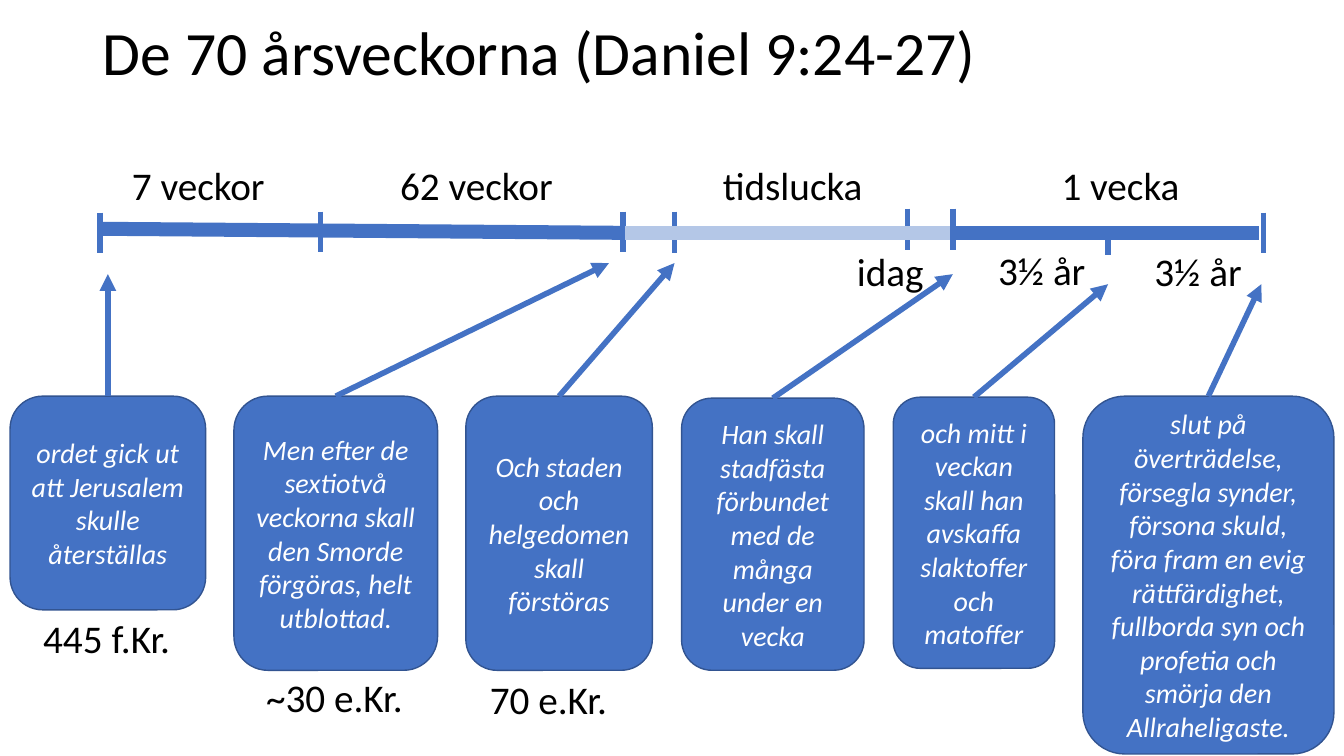
"""Timeline slide of the seventy weeks in Daniel 9."""
import pptx
import pptx.util
import pptx.dml.color
import pptx.enum.shapes
import pptx.enum.text
import pptx.oxml
import pptx.oxml.ns

Inches = pptx.util.Inches
Pt = pptx.util.Pt
ALIGN = pptx.enum.text.PP_ALIGN
ANCHOR = pptx.enum.text.MSO_ANCHOR
BLUE, EDGE, PALE = "4472C4", "325491", "B4C7E7"


def rgb(value):
    return pptx.dml.color.RGBColor.from_string(value)


def write(tf, text, size=28, color="000000", italic=False, align=ALIGN.LEFT, spacing=None):
    p = tf.paragraphs[0]
    p.alignment = align
    if spacing:
        p.line_spacing = spacing
    r = p.add_run()
    r.text = text
    r.font.name = "Calibri"
    r.font.size = Pt(size)
    r.font.italic = italic
    r.font.color.rgb = rgb(color)


class Timeline:
    def __init__(self, prs):
        self.slide = prs.slides.add_slide(prs.slide_layouts[5])
        self.shapes = self.slide.shapes

    def title(self, text, x, y, w, h):
        sp = self.shapes.title
        sp.left, sp.top, sp.width, sp.height = map(Inches, (x, y, w, h))
        tf = sp.text_frame
        tf.word_wrap = True
        tf.vertical_anchor = ANCHOR.MIDDLE
        write(tf, text, size=44, spacing=0.9)

    def line(self, x1, y1, x2, y2, color=BLUE, width=4, arrow=False):
        kind = pptx.enum.shapes.MSO_CONNECTOR.STRAIGHT
        sp = self.shapes.add_connector(kind, *map(Inches, (x1, y1, x2, y2)))
        sp.line.color.rgb = rgb(color)
        sp.line.width = Pt(width)
        if arrow:
            tail = pptx.oxml.ns.qn("a:tailEnd")
            sp.line._get_or_add_ln().append(
                pptx.oxml.xmlchemy.OxmlElement("a:tailEnd"))
            sp.line._get_or_add_ln().find(tail).set("type", "triangle")
        sp._element.spPr.append(pptx.oxml.xmlchemy.OxmlElement("a:effectLst"))

    def label(self, text, x, y, w):
        sp = self.shapes.add_textbox(*map(Inches, (x, y, w, 0.57)))
        tf = sp.text_frame
        tf.word_wrap = False
        tf.auto_size = pptx.enum.text.MSO_AUTO_SIZE.SHAPE_TO_FIT_TEXT
        write(tf, text)

    def event(self, text, x, y, w, h, tip):
        kind = pptx.enum.shapes.MSO_SHAPE.ROUNDED_RECTANGLE
        sp = self.shapes.add_shape(kind, *map(Inches, (x, y, w, h)))
        sp.shadow.inherit = False
        sp.fill.solid()
        sp.fill.fore_color.rgb = rgb(BLUE)
        sp.line.color.rgb = rgb(EDGE)
        sp.line.width = Pt(1)
        tf = sp.text_frame
        tf.word_wrap = True
        tf.vertical_anchor = ANCHOR.MIDDLE
        write(tf, text, size=20, color="FFFFFF", italic=True, align=ALIGN.CENTER)
        self.line(x + w / 2, y, *tip, arrow=True)


LABELS = [
    ("7 veckor", 1.21, 1.55, 1.53),
    ("62 veckor", 3.87, 1.55, 1.73),
    ("tidslucka", 7.07, 1.55, 1.61),
    ("1 vecka", 10.43, 1.55, 1.39),
    ("idag", 8.4, 2.4, 0.87),
    ("3½ år", 9.8, 2.39, 1.08),
    ("3½ år", 11.35, 2.4, 1.08),
    ("445 f.Kr.", 0.33, 6.05, 1.48),
    ("~30 e.Kr.", 2.54, 6.63, 1.58),
    ("70 e.Kr.", 4.76, 6.65, 1.38),
]
TICKS = [
    (0.99, 2.11, 2.51), (3.18, 2.1, 2.5), (6.18, 2.1, 2.5), (6.69, 2.1, 2.51),
    (9, 2.07, 2.48), (9.45, 2.07, 2.48), (10.99, 2.25, 2.53), (12.53, 2.11, 2.51),
]
EVENTS = [
    ("ordet gick ut att Jerusalem skulle återställas",
     0.1, 3.93, 1.94, 2.12, (1.07, 2.72)),
    ("Men efter de sextiotvå veckorna skall den Smorde förgöras, helt utblottad.",
     2.32, 3.93, 2.02, 2.72, (6.04, 2.61)),
    ("Och staden och helgedomen skall förstöras",
     4.62, 3.93, 1.85, 2.72, (6.69, 2.61)),
    ("Han skall stadfästa förbundet med de många under en vecka",
     6.76, 3.95, 1.81, 2.7, (9.45, 2.72)),
    ("och mitt i veckan skall han avskaffa slaktoffer och matoffer",
     8.86, 3.94, 1.6, 2.69, (10.99, 2.82)),
    ("slut på överträdelse, försegla synder, försona skuld, föra fram en evig "
     "rättfärdighet, fullborda syn och profetia och smörja den Allraheligaste.",
     10.74, 3.93, 2.49, 3.55, (12.51, 2.82)),
]


def main():
    prs = pptx.Presentation()
    prs.slide_width, prs.slide_height = Inches(13.33), Inches(7.5)
    s = Timeline(prs)
    s.title("De 70 årsveckorna (Daniel 9:24-27)", 0.92, 0.05, 11.5, 1.01)
    s.line(0.99, 2.27, 6.18, 2.31, width=10)
    s.line(9.45, 2.31, 12.49, 2.31, width=10)
    for x, top, bottom in TICKS:
        s.line(x, top, x, bottom)
    s.line(6.2, 2.31, 9.42, 2.31, color=PALE, width=10)
    for label in LABELS:
        s.label(*label)
    for event in EVENTS:
        s.event(*event)
    prs.save("out.pptx")


if __name__ == "__main__":
    main()
